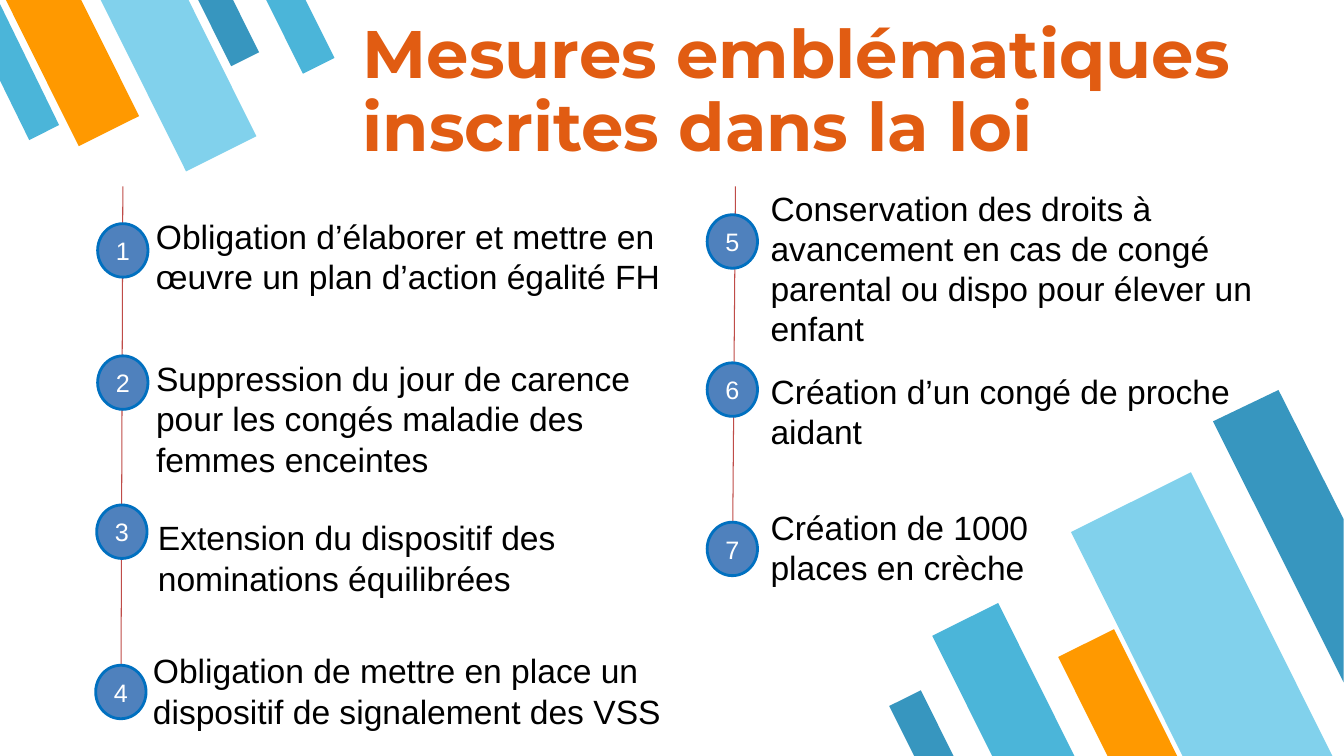
from lxml import etree
from pptx import Presentation
from pptx.dml.color import RGBColor
from pptx.enum import shapes, text
from pptx.oxml import ns
from pptx.util import Pt

WHITE = RGBColor(0xFF, 0xFF, 0xFF)
BLACK = RGBColor(0, 0, 0)
RUST = RGBColor(0xE1, 0x5C, 0x12)
RED = RGBColor(0xBF, 0x4C, 0x48)
BLUE = RGBColor(0x4F, 0x81, 0xBD)
RIM = RGBColor(0x00, 0x70, 0xC0)
SKY = RGBColor(0x81, 0xD1, 0xEC)
AQUA = RGBColor(0x4B, 0xB5, 0xD9)
TEAL = RGBColor(0x37, 0x96, 0xBF)
GOLD = RGBColor(0xFF, 0x99, 0x00)

WIDE, HIGH = 960.48, 540
TITLE = "Mesures emblématiques inscrites dans la loi"

UP, DOWN = 333.5, 153.5
BARS = [
    (692.6, 435.6, 52.6, 130.3, DOWN, AQUA),
    (812.9, 346.3, 95.8, 235.4, DOWN, SKY),
    (778.3, 453.6, 44.6, 109.4, DOWN, GOLD),
    (648, 495.4, 25.2, 61.9, DOWN, TEAL),
    (151.2, -12.2, 22.3, 57.6, UP, TEAL),
    (26.6, -21.6, 48.2, 121.7, UP, GOLD),
    (98.6, -23.8, 56.2, 141.1, UP, SKY),
    (200.9, -13.7, 25.2, 64.1, UP, AQUA),
]
EDGES = [
    ([(913.7, 278.6), (866.9, 301), (960.2, 487.4), (960.2, 370.8)], TEAL),
    ([(20.9, 100.1), (42.2, 89.3), (0, 2.9), (0, 57.6)], AQUA),
]
RAILS = [(87.8, 133.2, 86.4, 504.7), (525.6, 133.2, 523.4, 410.4)]
DOT_W, DOT_H = 36, 38.2
ITEMS = [
    ((69.8, 159.8), (104.4, 150.5, 403.2, 65.5),
     "Obligation d’élaborer et mettre en œuvre un plan d’action égalité FH"),
    ((69.8, 254.2), (104.4, 252, 401.8, 94.3),
     "Suppression du jour de carence pour les congés maladie des femmes enceintes"),
    ((69.1, 360.7), (105.8, 365.8, 333.4, 65.5),
     "Extension du dispositif des nominations équilibrées"),
    ((68.4, 475.2), (102.2, 460.8, 421.2, 65.5),
     "Obligation de mettre en place un dispositif de signalement des VSS"),
    ((505.4, 153.4), (543.6, 130.3, 397.4, 123.8),
     "Conservation des droits à avancement en cas de congé parental ou dispo pour élever un enfant"),
    ((505.4, 259.2), (543.6, 261.4, 373, 87.1),
     "Création d’un congé de proche aidant"),
    ((505.4, 373), (543.6, 358.6, 211.7, 65.5),
     "Création de 1000 places en crèche"),
]

deck = Presentation()
deck.slide_width, deck.slide_height = Pt(WIDE), Pt(HIGH)
slide = deck.slides.add_slide(deck.slide_layouts[6])
parts = slide.shapes


def paint(shape, color):
    shape.shadow.inherit = False
    shape.fill.solid()
    shape.fill.fore_color.rgb = color
    shape.line.fill.background()


def write(shape, words, size, color, face="Arial"):
    frame = shape.text_frame
    frame.word_wrap = True
    para = frame.paragraphs[0]
    para.text = words
    font = para.font
    font.name, font.size, font.color.rgb = face, Pt(size), color
    return frame, para


def label(box, *style):
    return write(parts.add_textbox(*map(Pt, box)), *style)


for *box, turn, color in BARS:
    bar = parts.add_shape(shapes.MSO_SHAPE.FLOWCHART_MANUAL_INPUT, *map(Pt, box))
    bar.rotation = turn
    bar._element.spPr.find(ns.qn("a:xfrm")).set("flipH", "1")
    paint(bar, color)

for spots, color in EDGES:
    first, *rest = [(Pt(x), Pt(y)) for x, y in spots]
    pen = parts.build_freeform(*first)
    pen.add_line_segments(rest)
    paint(pen.convert_to_shape(), color)

frame, para = label((259.2, 21.6, 653, 90), TITLE, 48, RUST, "Montserrat")
frame.margin_left = frame.margin_right = frame.margin_top = frame.margin_bottom = 0
frame.vertical_anchor = text.MSO_ANCHOR.MIDDLE
para.line_spacing = 0.9
para.font.bold = True

for ends in RAILS:
    rail = parts.add_connector(shapes.MSO_CONNECTOR.STRAIGHT, *map(Pt, ends))
    rail.line.color.rgb = RED
    rail.line.width = Pt(0.75)
    etree.SubElement(rail._element.spPr, ns.qn("a:effectLst"))

for rank, (spot, box, words) in enumerate(ITEMS, 1):
    dot = parts.add_shape(shapes.MSO_SHAPE.OVAL, *map(Pt, (*spot, DOT_W, DOT_H)))
    paint(dot, BLUE)
    dot.line.color.rgb = RIM
    dot.line.width = Pt(2)
    frame, para = write(dot, str(rank), 18, WHITE)
    frame.vertical_anchor = text.MSO_ANCHOR.MIDDLE
    para.alignment = text.PP_ALIGN.CENTER
    label(box, words, 24, BLACK)

deck.save("out.pptx")
